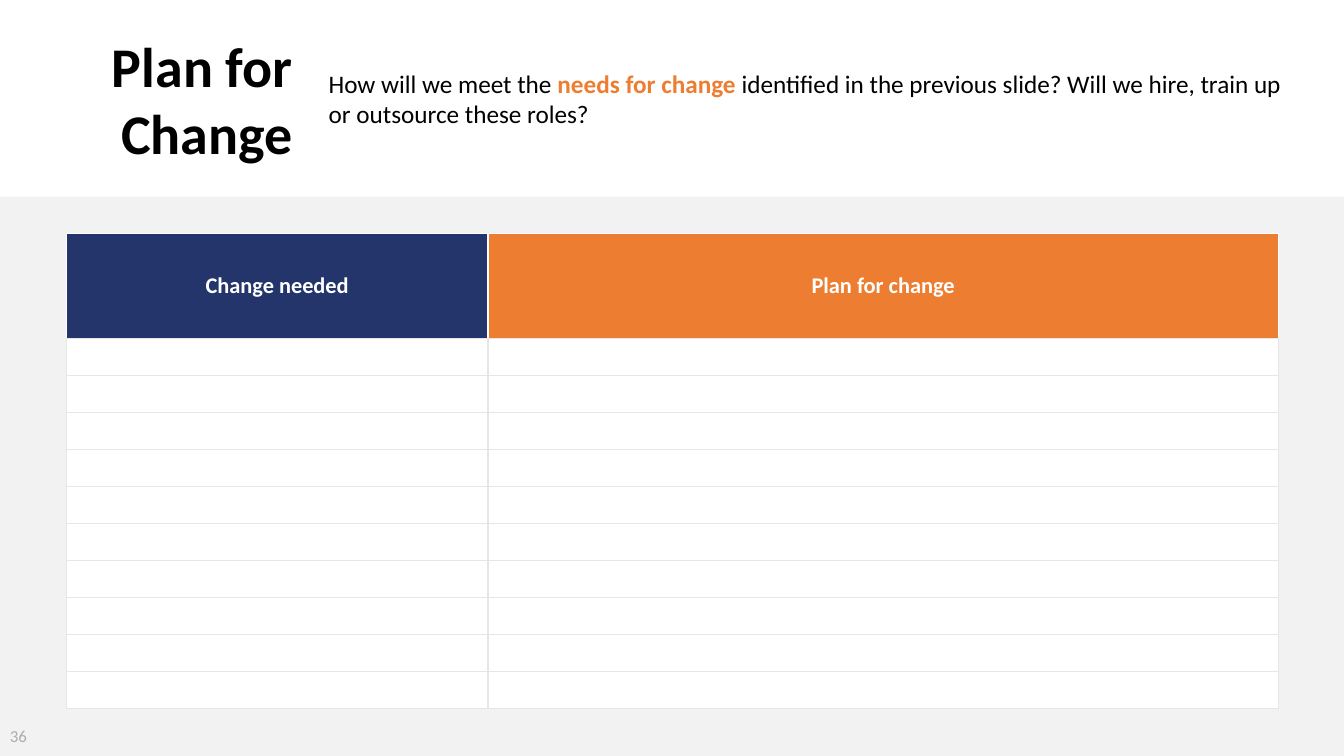
from dataclasses import dataclass

from lxml import etree
from pptx import Presentation
from pptx.dml.color import RGBColor
from pptx.enum.shapes import MSO_SHAPE
from pptx.enum.text import MSO_ANCHOR, MSO_AUTO_SIZE, PP_ALIGN
from pptx.oxml.ns import qn
from pptx.util import Inches, Pt

RECTANGLE = MSO_SHAPE.RECTANGLE
TOP, MIDDLE = MSO_ANCHOR.TOP, MSO_ANCHOR.MIDDLE
LEFT, CENTER, RIGHT = PP_ALIGN.LEFT, PP_ALIGN.CENTER, PP_ALIGN.RIGHT
FIT_SHAPE = MSO_AUTO_SIZE.SHAPE_TO_FIT_TEXT

SLIDE_WIDTH = Inches(13.33)
SLIDE_HEIGHT = Inches(7.5)
COLUMN_SHARES = (31.36, 58.81)
HEADER_SHARE = 13.87
ROW_SHARE = 4.89
BLANK_ROWS = 10


@dataclass(frozen=True)
class Theme:
    font: str = "Calibri"
    black: str = "000000"
    white: str = "FFFFFF"
    navy: str = "23356A"
    orange: str = "EC7D31"
    band: str = "F2F2F2"
    grid: str = "E7E6E6"
    muted: str = "AFABAB"
    title_size: int = 40
    question_size: int = 18
    header_size: int = 16
    number_size: int = 12
    border_width: int = 1


THEME = Theme()


def across(percent):
    return round(SLIDE_WIDTH * percent / 100)


def down(percent):
    return round(SLIDE_HEIGHT * percent / 100)


def place(left, top, width, height):
    return across(left), down(top), across(width), down(height)


def paint(fill, color):
    fill.solid()
    fill.fore_color.rgb = RGBColor.from_string(color)


def format_run(run, size, color, bold=False):
    run.font.name = THEME.font
    run.font.size = Pt(size)
    run.font.bold = bold
    run.font.color.rgb = RGBColor.from_string(color)


def add_band(slide, area):
    band = slide.shapes.add_shape(RECTANGLE, *area)
    band.shadow.inherit = False
    paint(band.fill, THEME.band)
    band.line.fill.background()


def add_text(slide, area, pieces, size, align=LEFT, anchor=TOP, grow=False):
    frame = slide.shapes.add_textbox(*area).text_frame
    frame.word_wrap = True
    frame.vertical_anchor = anchor
    if grow:
        frame.auto_size = FIT_SHAPE
    paragraph = frame.paragraphs[0]
    paragraph.alignment = align
    for text, color, bold in pieces:
        run = paragraph.add_run()
        run.text = text
        format_run(run, size, color, bold)


def set_borders(cell, side_color, bottom_color):
    properties = cell._tc.get_or_add_tcPr()
    colors = (side_color, side_color, side_color, bottom_color)
    for index, (side, color) in enumerate(zip("LRTB", colors)):
        line = etree.Element(qn(f"a:ln{side}"), w=str(Pt(THEME.border_width)))
        fill = etree.SubElement(line, qn("a:solidFill"))
        etree.SubElement(fill, qn("a:srgbClr"), val=color)
        properties.insert(index, line)


def fill_header(cell, text, color):
    cell.text_frame.text = text
    cell.vertical_anchor = MIDDLE
    paragraph = cell.text_frame.paragraphs[0]
    paragraph.alignment = CENTER
    format_run(paragraph.runs[0], THEME.header_size, THEME.white, True)
    paint(cell.fill, color)
    set_borders(cell, THEME.white, THEME.grid)


def fill_blank(cell):
    cell.margin_top = cell.margin_bottom = 0
    paint(cell.fill, THEME.white)
    set_borders(cell, THEME.grid, THEME.grid)


def add_plan_table(slide, left, top, headers):
    area = place(left, top, sum(COLUMN_SHARES), HEADER_SHARE + BLANK_ROWS * ROW_SHARE)
    table = slide.shapes.add_table(BLANK_ROWS + 1, len(headers), *area).table
    for column, share in zip(table.columns, COLUMN_SHARES):
        column.width = across(share)
    for index, row in enumerate(table.rows):
        row.height = down(ROW_SHARE if index else HEADER_SHARE)
        for cell, (text, color) in zip(row.cells, headers):
            if index:
                fill_blank(cell)
            else:
                fill_header(cell, text, color)


def main():
    presentation = Presentation()
    presentation.slide_width = SLIDE_WIDTH
    presentation.slide_height = SLIDE_HEIGHT
    slide = presentation.slides.add_slide(presentation.slide_layouts[6])

    add_band(slide, place(0, 26, 100, 74))
    add_text(slide, place(0, 94.67, 4.5, 5.33), [("36", THEME.muted, False)],
             THEME.number_size, anchor=MIDDLE)
    add_plan_table(slide, 4.95, 30.93, [
        ("Change needed", THEME.navy),
        ("Plan for change", THEME.orange),
    ])
    add_text(slide, place(3.98, 3.47, 18.53, 19.33),
             [("Plan for Change", THEME.black, True)],
             THEME.title_size, align=RIGHT, grow=True)
    add_text(slide, place(23.71, 8.4, 73.22, 9.47), [
        ("How will we meet the ", THEME.black, False),
        ("needs for change ", THEME.orange, True),
        ("identified in the previous slide? Will we hire, train up "
         "or outsource these roles?", THEME.black, False),
    ], THEME.question_size, grow=True)

    presentation.save("out.pptx")


if __name__ == "__main__":
    main()
